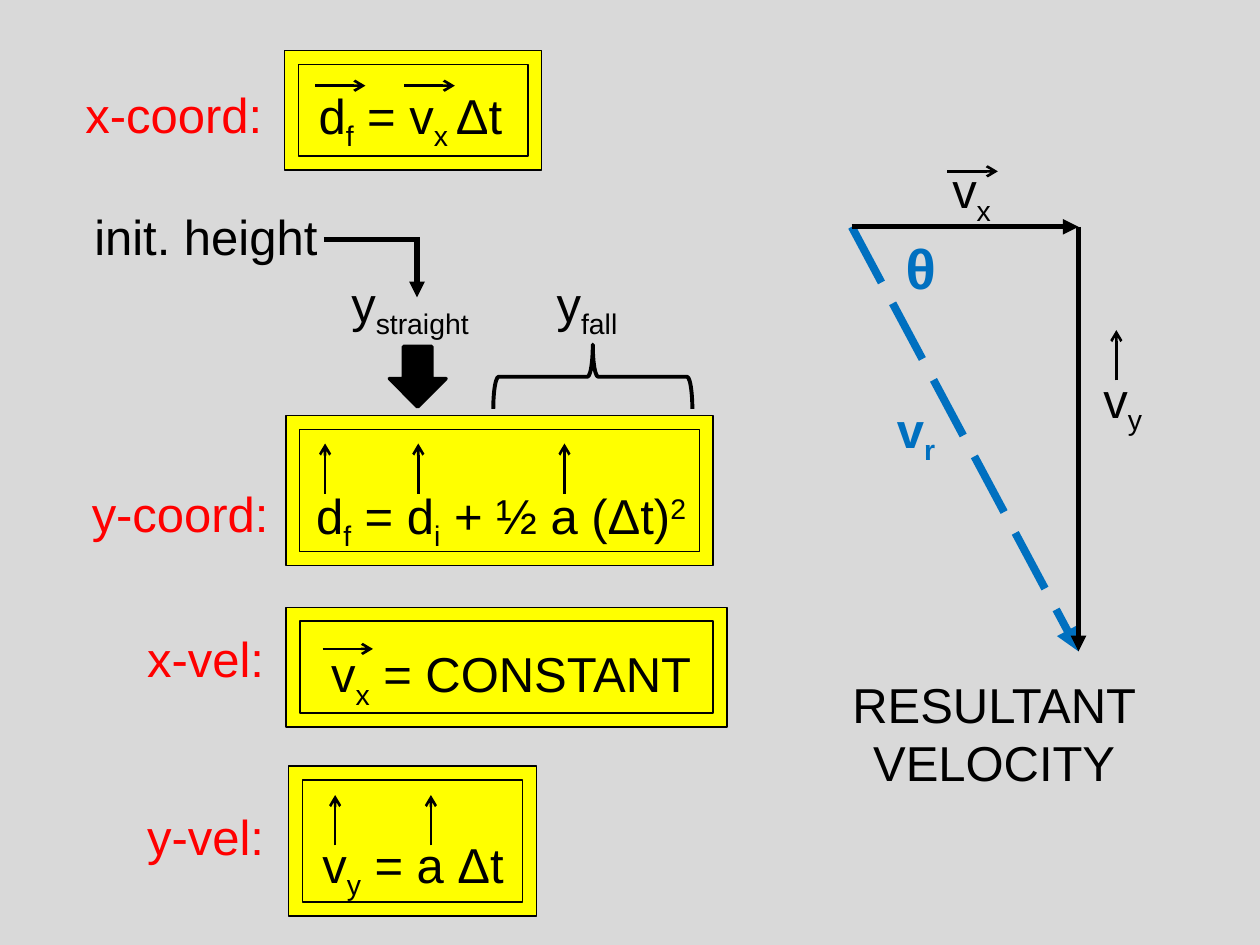
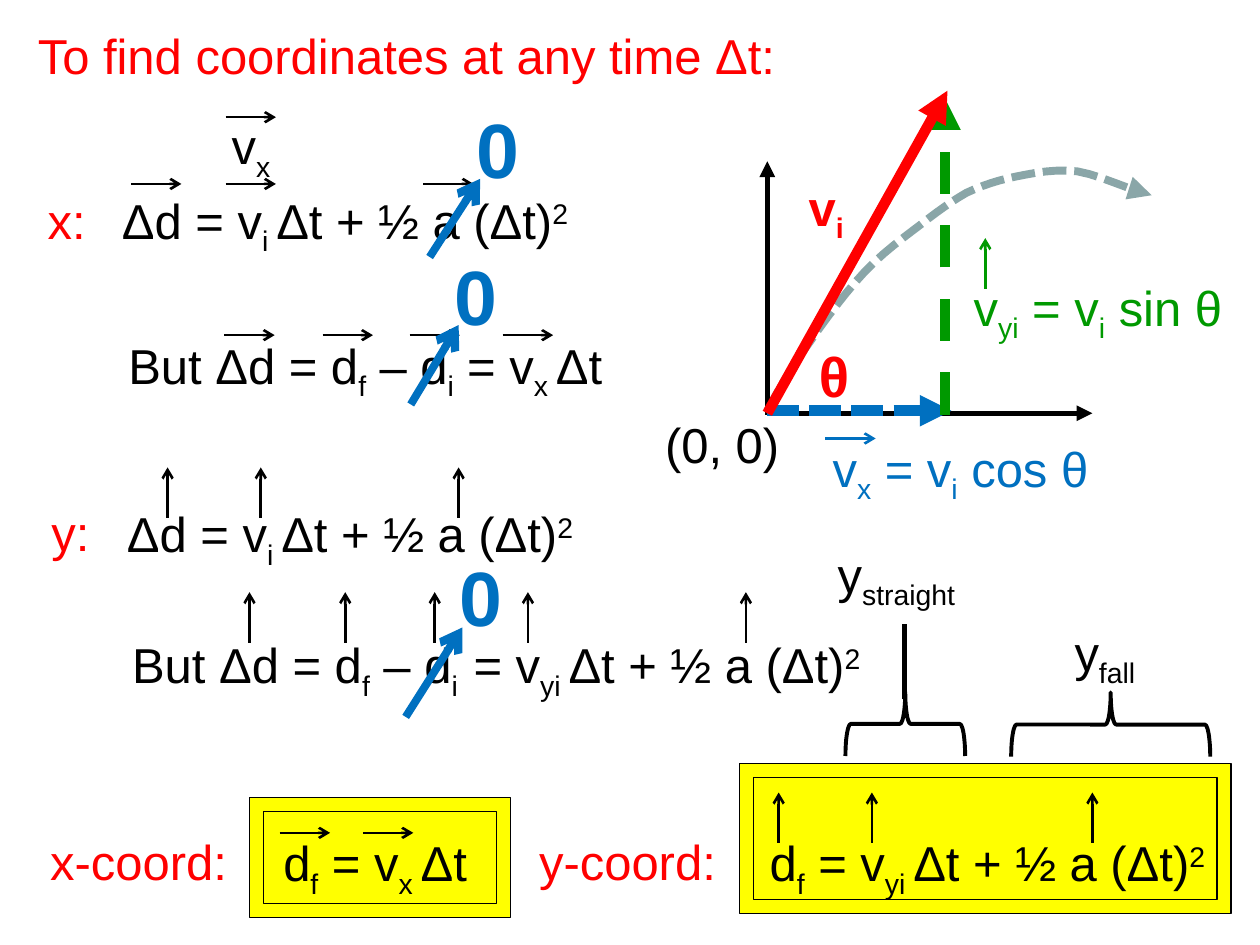
from lxml import etree
from pptx import Presentation
from pptx.dml.color import RGBColor
from pptx.enum.dml import MSO_LINE as Dash
from pptx.enum.shapes import MSO_CONNECTOR as Connector, MSO_SHAPE as Shape
from pptx.enum.text import MSO_ANCHOR as Anchor, MSO_AUTO_SIZE as AutoSize, PP_ALIGN as Align
from pptx.oxml.ns import qn
from pptx.util import Inches, Pt

BLACK = RGBColor(0, 0, 0)
WHITE = RGBColor(0xFF, 0xFF, 0xFF)
GREY = RGBColor(0xD9, 0xD9, 0xD9)
YELLOW = RGBColor(0xFF, 0xFF, 0)
RED = RGBColor(0xFF, 0, 0)
BLUE = RGBColor(0, 0x70, 0xC0)
GREEN = RGBColor(0, 0x99, 0)
SLATE = RGBColor(0x8A, 0xA6, 0xA8)

FONT = "Arial"
BODY, THETA, ZERO = 28, 32, 44
FRAME_INSET = 0.11
VECTOR_LENGTH = 0.4
CURVE_STEPS = 6
BASELINES = {"_": "-25000", "^": "30000"}

Y_STRAIGHT, Y_FALL = "y|_straight", "y|_fall"
X_RESULT = "d|_f| = v|_x |Δt"
DISPLACEMENT = "Δd = v|_i |Δt + ½ a (Δt)|^2"
BUT = "But Δd = d|_f| – d|_i"

# text, left, top, width, then optional colour, size, bold
SUMMARY = {
    "background": GREY,
    "frames": [
        (2.27, 4.82, 3.5, 0.95),
        (2.27, 3.3, 3.39, 1.19),
        (2.26, 0.4, 2.04, 0.95),
        (2.29, 6.08, 1.97, 1.19),
    ],
    "labels": [
        ("x-coord:", 0.58, 0.62, 1.62, RED),
        ("y-coord:", 0.63, 3.79, 1.62, RED),
        ("x-vel:", 1.07, 4.94, 1.14, RED),
        ("y-vel:", 1.07, 6.35, 1.14, RED),
        (X_RESULT, 2.43, 0.63, 1.9),
        ("d|_f| = d|_i| + ½ a (Δt)|^2", 2.41, 3.8, 3.19),
        ("v|_x| = CONSTANT", 2.53, 5.06, 3.17),
        ("v|_y| = a Δt", 2.46, 6.57, 1.65),
        ("init. height", 0.65, 1.59, 2),
        (Y_STRAIGHT, 2.69, 2.12, 1.26),
        (Y_FALL, 4.32, 2.12, 0.73),
        ("v|_x", 7.46, 1.22, 0.53),
        ("v|_y", 8.66, 2.88, 0.53),
        ("v|_r", 7.02, 3.12, 0.57, BLUE, BODY, True),
        ("θ", 7.09, 1.8, 0.44, BLUE, THETA, True),
        ("RESULTANT\nVELOCITY", 6.65, 5.3, 2.48),
    ],
    "right_vectors": [
        (0.68, [2.5, 3.21], BLACK),
        (5.15, [2.56], BLACK),
        (1.36, [7.52], BLACK),
    ],
    "up_vectors": [
        (3.92, [2.58, 3.32, 4.48], BLACK),
        (6.71, [2.66, 3.42], BLACK),
        (3.02, [8.86], BLACK),
    ],
    "braces": [(4.45, 2.2, 0.51, 1.58)],
    "lines": [
        ((2.57, 1.9), (3.33, 1.9), BLACK, 3),
        ((3.31, 1.9), (3.31, 2.36), BLACK, 3, "triangle"),
        ((6.76, 1.8), (8.56, 5.17), BLUE, 4.5, "triangle", Dash.LONG_DASH),
        ((8.56, 1.8), (8.56, 5.17), BLACK, 3, "triangle"),
        ((6.76, 1.8), (8.56, 1.8), BLACK, 3, "triangle"),
    ],
}
HEIGHT_ARROW = (3.09, 2.75, 0.45, 0.48)

DERIVATION = {
    "background": WHITE,
    "frames": [(5.87, 6.06, 3.9, 1.19), (1.98, 6.33, 2.07, 0.95)],
    "labels": [
        ("x:", 0.28, 1.46, 0.51, RED),
        ("y:", 0.31, 3.94, 0.51, RED),
        ("x-coord:", 0.3, 6.55, 1.62, RED),
        ("y-coord:", 4.18, 6.55, 1.62, RED),
        ("v|_x", 1.74, 0.87, 0.53),
        (DISPLACEMENT, 0.87, 1.46, 3.86),
        (BUT, 0.92, 2.61, 2.81),
        ("= v|_x |Δt", 3.61, 2.61, 1.33),
        (DISPLACEMENT, 0.91, 3.95, 3.86),
        (BUT, 0.95, 4.99, 2.81),
        ("= v|_yi |Δt + ½ a (Δt)|^2", 3.66, 4.99, 3.35),
        (X_RESULT, 2.15, 6.56, 1.9),
        ("d|_f| = v|_yi |Δt + ½ a (Δt)|^2", 6.01, 6.56, 3.82),
        ("0", 3.68, 0.76, 0.55, BLUE, ZERO, True),
        ("0", 3.51, 1.92, 0.55, BLUE, ZERO, True),
        ("0", 3.55, 4.31, 0.55, BLUE, ZERO, True),
        (Y_STRAIGHT, 6.55, 4.27, 1.26),
        (Y_FALL, 8.43, 4.89, 0.73),
        ("(0, 0)", 5.18, 3.24, 1.12),
        ("v|_x| = v|_i| cos θ", 6.51, 3.43, 2.3, BLUE),
        ("v|_yi| = v|_i| sin θ", 7.63, 2.15, 2.24, GREEN),
        ("v|_i", 6.32, 1.36, 0.49, RED, BODY, True),
        ("θ", 6.4, 2.66, 0.44, RED, THETA, True),
    ],
    "right_vectors": [
        (0.93, [1.79], BLACK),
        (1.46, [1.04, 1.79, 3.36], BLACK),
        (2.66, [1.78, 2.56, 3.25, 3.99], BLACK),
        (6.61, [2.22, 2.88], BLACK),
        (3.48, [6.55], BLUE),
    ],
    "up_vectors": [
        (4.11, [1.33, 2.07, 3.64], BLACK),
        (5.1, [1.98, 2.74, 3.45, 4.19, 5.92], BLACK),
        (6.69, [6.18, 6.92, 8.67], BLACK),
        (2.29, [7.82], GREEN),
    ],
    "braces": [(8.56, 4.96, 0.51, 1.58), (6.93, 5.27, 0.51, 0.95)],
    "lines": [
        ((6.09, 3.28), (8.67, 3.28), BLACK, 3, "triangle"),
        ((6.09, 3.29), (6.09, 1.28), BLACK, 3, "triangle"),
        ((3.41, 2.04), (3.81, 1.42), BLUE, 4.5, "arrow"),
        ((3.26, 3.21), (3.64, 2.58), BLUE, 4.5, "arrow"),
        ((3.22, 5.69), (3.67, 4.98), BLUE, 4.5, "arrow"),
        ((7.18, 5.55), (7.18, 4.95), BLACK, 3),
        ((6.09, 3.26), (7.55, 3.26), BLUE, 6, "triangle", Dash.SQUARE_DOT),
        ((7.5, 3.29), (7.5, 0.78), GREEN, 6, "triangle", Dash.DASH),
        ((6.09, 3.28), (7.52, 0.72), RED, 6, "triangle"),
    ],
}
DERIVATION_TITLE = ("To find coordinates at any time Δt:", 0.2, 0.15, 6.15, RED)
TRAJECTORY_START = (6.09, 3.26)
TRAJECTORY = [
    ((6.19, 3.07), (6.3, 2.89), (6.43, 2.71)),
    ((6.56, 2.52), (6.72, 2.31), (6.86, 2.16)),
    ((7.01, 2), (7.18, 1.88), (7.31, 1.78)),
    ((7.45, 1.67), (7.55, 1.6), (7.67, 1.53)),
    ((7.8, 1.47), (7.92, 1.43), (8.07, 1.4)),
    ((8.22, 1.37), (8.37, 1.34), (8.55, 1.36)),
    ((8.73, 1.39), (8.97, 1.51), (9.14, 1.55)),
]


def write_label(label, text, left, top, width, color=BLACK, size=BODY, bold=False):
    rows = text.split("\n")
    label.left, label.top, label.width = Inches(left), Inches(top), Inches(width)
    label.height = Inches(0.1 + len(rows) * size * 1.2 / 72)
    frame = label.text_frame
    frame.word_wrap = False
    frame.auto_size = AutoSize.SHAPE_TO_FIT_TEXT
    frame.vertical_anchor = Anchor.TOP
    for index, row in enumerate(rows):
        paragraph = frame.add_paragraph() if index else frame.paragraphs[0]
        paragraph.alignment = Align.CENTER if len(rows) > 1 else Align.LEFT
        for part in row.split("|"):
            baseline = BASELINES.get(part[0])
            run = paragraph.add_run()
            run.text = part[1:] if baseline else part
            run.font.name, run.font.size, run.font.bold = FONT, Pt(size), bold
            run.font.color.rgb = color
            if baseline:
                run._r.get_or_add_rPr().set("baseline", baseline)


def style_line(item, color, weight, head=None, dash=None):
    item.line.color.rgb = color
    item.line.width = Pt(weight)
    if dash:
        item.line.dash_style = dash
    properties = item._element.spPr
    if head:
        etree.SubElement(properties.find(qn("a:ln")), qn("a:tailEnd"), type=head)


def add_line(slide, start, end, *style):
    line = slide.shapes.add_connector(Connector.STRAIGHT, *map(Inches, start + end))
    style_line(line, *style)
    etree.SubElement(line._element.spPr, qn("a:effectLst"))


def add_outlined(slide, preset, bounds, weight, fill=None):
    shape = slide.shapes.add_shape(preset, *map(Inches, bounds))
    shape.shadow.inherit = False
    if fill is None:
        shape.fill.background()
    else:
        shape.fill.solid()
        shape.fill.fore_color.rgb = fill
    style_line(shape, BLACK, weight)
    return shape


def add_double_frame(slide, left, top, width, height):
    for inset in (0, FRAME_INSET):
        bounds = (left + inset, top + inset, width - 2 * inset, height - 2 * inset)
        add_outlined(slide, Shape.RECTANGLE, bounds, 0.75, YELLOW)


def add_trajectory(slide):
    points, start = [], TRAJECTORY_START
    for segment in TRAJECTORY:
        for step in range(1, CURVE_STEPS + 1):
            t = step / CURVE_STEPS
            weights = ((1 - t) ** 3, 3 * t * (1 - t) ** 2, 3 * t ** 2 * (1 - t), t ** 3)
            points.append(tuple(
                Inches(sum(w * p[axis] for w, p in zip(weights, (start, *segment))))
                for axis in (0, 1)))
        start = segment[-1]
    builder = slide.shapes.build_freeform(*map(Inches, TRAJECTORY_START))
    builder.add_line_segments(points, close=False)
    curve = builder.convert_to_shape()
    curve.shadow.inherit = False
    curve.fill.background()
    style_line(curve, SLATE, 4.5, "triangle", Dash.SQUARE_DOT)


def fill_slide(slide, content):
    slide.background.fill.solid()
    slide.background.fill.fore_color.rgb = content["background"]
    for bounds in content["frames"]:
        add_double_frame(slide, *bounds)
    for label in content["labels"]:
        write_label(slide.shapes.add_textbox(0, 0, 0, 0), *label)
    for key, dx, dy in (("right_vectors", VECTOR_LENGTH, 0), ("up_vectors", 0, -VECTOR_LENGTH)):
        for y, xs, color in content[key]:
            for x in xs:
                add_line(slide, (x, y), (x + dx, y + dy), color, 1.5, "arrow")
    for bounds in content["braces"]:
        add_outlined(slide, Shape.RIGHT_BRACE, bounds, 2.25).rotation = 270
    for line in content["lines"]:
        add_line(slide, *line)


def main():
    deck = Presentation()
    deck.slide_width, deck.slide_height = Inches(10), Inches(7.5)
    title_only, blank = deck.slide_layouts[5], deck.slide_layouts[6]

    summary = deck.slides.add_slide(blank)
    fill_slide(summary, SUMMARY)
    add_outlined(summary, Shape.DOWN_ARROW, HEIGHT_ARROW, 2, BLACK)

    derivation = deck.slides.add_slide(title_only)
    write_label(derivation.shapes.title, *DERIVATION_TITLE)
    add_trajectory(derivation)
    fill_slide(derivation, DERIVATION)

    deck.save("out.pptx")


if __name__ == "__main__":
    main()
